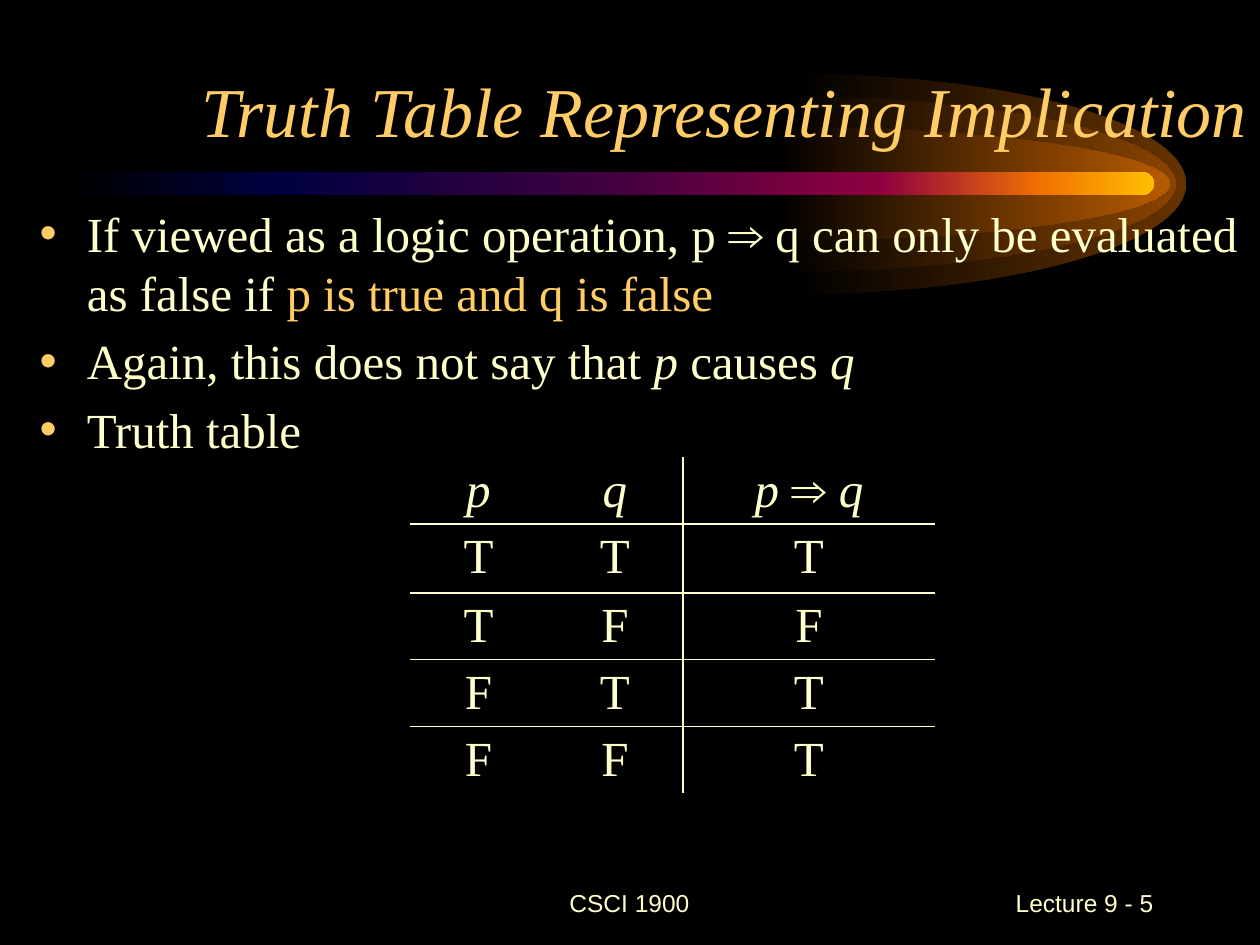
from lxml.etree import SubElement
from pptx import Presentation
from pptx.dml.color import RGBColor
from pptx.enum.shapes import MSO_SHAPE as SHAPE
from pptx.enum.text import MSO_ANCHOR as ANCHOR, MSO_AUTO_SIZE as AUTO, PP_ALIGN as ALIGN
from pptx.oxml.ns import qn
from pptx.util import Emu, Pt

BLACK = RGBColor(0x00, 0x00, 0x00)
CREAM = RGBColor(0xFF, 0xFF, 0xCC)
GOLD = RGBColor(0xFF, 0xCC, 0x66)
BROWN = RGBColor(0x66, 0x33, 0x00)
RUST = RGBColor(0x89, 0x44, 0x00)
ORANGE = RGBColor(0xB7, 0x5B, 0x00)
NAVY = RGBColor(0x00, 0x00, 0x40)
PLUM = RGBColor(0x40, 0x00, 0x40)
CRIMSON = RGBColor(0x8F, 0x00, 0x40)
FLAME = RGBColor(0xF2, 0x73, 0x00)
AMBER = RGBColor(0xFF, 0xBF, 0x00)

SERIF, SANS = "Times New Roman", "Arial"
NO_GRID = "{2D5ABB26-0587-4C30-8999-92F81FD0307C}"

TITLE = "Truth Table Representing Implication"
BULLETS = [
    [("If viewed as a logic operation, p ⇒ q can only be evaluated as false if", {}),
     (" p is true and q is false", {"color": GOLD})],
    [("Again, this does not say that", {}), (" p ", {"italic": True}),
     ("causes ", {}), ("q", {"italic": True})],
    [("Truth table", {})],
]
TRUTH = [
    ("p", "q", "p ⇒ q"),
    ("T", "T", "T"),
    ("T", "F", "F"),
    ("F", "T", "T"),
    ("F", "F", "T"),
]
COLS = [137, 136, 252]
ROWS = [66, 69, 66, 66, 66]
FOOTERS = [
    ("CSCI 1900", (430, 871, 399, 63), ALIGN.CENTER),
    (" Lecture 9 - 5", (903, 871, 263, 63), ALIGN.RIGHT),
]
GLOWS = [(792, 110, BROWN), (782, 88, RUST), (776, 57, ORANGE)]
GLOW_Y, GLOW_RX, ARC = 184, 394, 0.55
BAR_STOPS = [(0, BLACK), (20, NAVY), (50, PLUM), (75, CRIMSON), (90, FLAME), (100, AMBER)]


def px(n):
    return Emu(round(n * 914400 / 126))


def box(*lengths):
    return [px(n) for n in lengths]


def add_run(p, text, size=28, name=SERIF, color=CREAM, italic=False):
    r = p.add_run()
    r.text = text
    for key, value in {"size": Pt(size), "name": name, "italic": italic}.items():
        setattr(r.font, key, value)
    r.font.color.rgb = color


def shade(sp, stops):
    sp.shadow.inherit = False
    sp.line.fill.background()
    sp.fill.gradient()
    sp.fill.gradient_angle = 0
    gs_list = sp._element.spPr.find(qn("a:gradFill")).find(qn("a:gsLst"))
    for gs in list(gs_list):
        gs_list.remove(gs)
    for pos, color in stops:
        gs = SubElement(gs_list, qn("a:gs"), pos=str(pos * 1000))
        SubElement(gs, qn("a:srgbClr"), val=str(color))


def add_glow(shapes, cx, ry, color):
    fb = shapes.build_freeform(cx, GLOW_Y - ry, scale=px(1))
    fb.add_line_segments([(cx + GLOW_RX, GLOW_Y), (cx, GLOW_Y + ry)], close=True)
    sp = fb.convert_to_shape()
    controls = [
        [(ARC * GLOW_RX, 0), (GLOW_RX, (1 - ARC) * ry)],
        [(GLOW_RX, (1 + ARC) * ry), (ARC * GLOW_RX, 2 * ry)],
    ]
    for line, points in zip(list(sp._element.iter(qn("a:lnTo"))), controls):
        line.tag = qn("a:cubicBezTo")
        for i, (x, y) in enumerate(points):
            pt = SubElement(line, qn("a:pt"), x=str(round(x)), y=str(round(y)))
            line.insert(i, pt)
    shade(sp, [(0, BLACK), (100, color)])


def place(shapes, sp, bounds, anchor):
    shapes._spTree.append(sp._element)
    sp.left, sp.top, sp.width, sp.height = box(*bounds)
    tf = sp.text_frame
    for key, value in {"word_wrap": True, "auto_size": AUTO.NONE, "vertical_anchor": anchor}.items():
        setattr(tf, key, value)
    return tf


def add_borders(cell, sides):
    for side in sides:
        ln = SubElement(cell._tc.get_or_add_tcPr(), qn(f"a:ln{side}"), w=str(Pt(1)))
        fill = SubElement(ln, qn("a:solidFill"))
        SubElement(fill, qn("a:srgbClr"), val=str(CREAM))


def add_truth_table(shapes):
    frame = shapes.add_table(len(ROWS), len(COLS), *box(410, 457, sum(COLS), sum(ROWS)))
    table = frame.table
    table.first_row = table.horz_banding = False
    table._tbl.tblPr.find(qn("a:tableStyleId")).text = NO_GRID
    for col, width in zip(table.columns, COLS):
        col.width = px(width)
    for row, height in zip(table.rows, ROWS):
        row.height = px(height)
    for i, values in enumerate(TRUTH):
        for j, value in enumerate(values):
            cell = table.cell(i, j)
            p = cell.text_frame.paragraphs[0]
            p.alignment = ALIGN.CENTER
            add_run(p, value, italic=i == 0)
            sides = ["", "R", "L"][j] + ("T" if i else "") + ("B" if i < len(ROWS) - 1 else "")
            add_borders(cell, sides)
            cell.fill.background()


def main():
    prs = Presentation()
    prs.slide_width, prs.slide_height = box(1260, 945)
    slide = prs.slides.add_slide(prs.slide_layouts[1])
    slide.background.fill.solid()
    slide.background.fill.fore_color.rgb = BLACK
    shapes = slide.shapes
    title, body = shapes.title, slide.placeholders[1]

    for glow in GLOWS:
        add_glow(shapes, *glow)
    bar = shapes.add_shape(SHAPE.ROUNDED_RECTANGLE, *box(63, 172, 1091, 23))
    bar.adjustments[0] = 0.5
    shade(bar, BAR_STOPS)

    for text, bounds, align in FOOTERS:
        tf = place(shapes, shapes.add_textbox(*box(*bounds)), bounds, ANCHOR.MIDDLE)
        tf.paragraphs[0].alignment = align
        add_run(tf.paragraphs[0], text, size=14, name=SANS)

    p = place(shapes, title, (0, 0, 1260, 158), ANCHOR.BOTTOM).paragraphs[0]
    p.alignment = ALIGN.RIGHT
    add_run(p, TITLE, size=40, color=GOLD, italic=True)

    tf = place(shapes, body, (27, 197, 1233, 551), ANCHOR.TOP)
    for i, runs in enumerate(BULLETS):
        p = tf.add_paragraph() if i else tf.paragraphs[0]
        bullet = SubElement(p._p.get_or_add_pPr(), qn("a:buClr"))
        SubElement(bullet, qn("a:srgbClr"), val=str(GOLD))
        for text, style in runs:
            add_run(p, text, **style)

    add_truth_table(shapes)
    prs.save("out.pptx")


if __name__ == "__main__":
    main()
